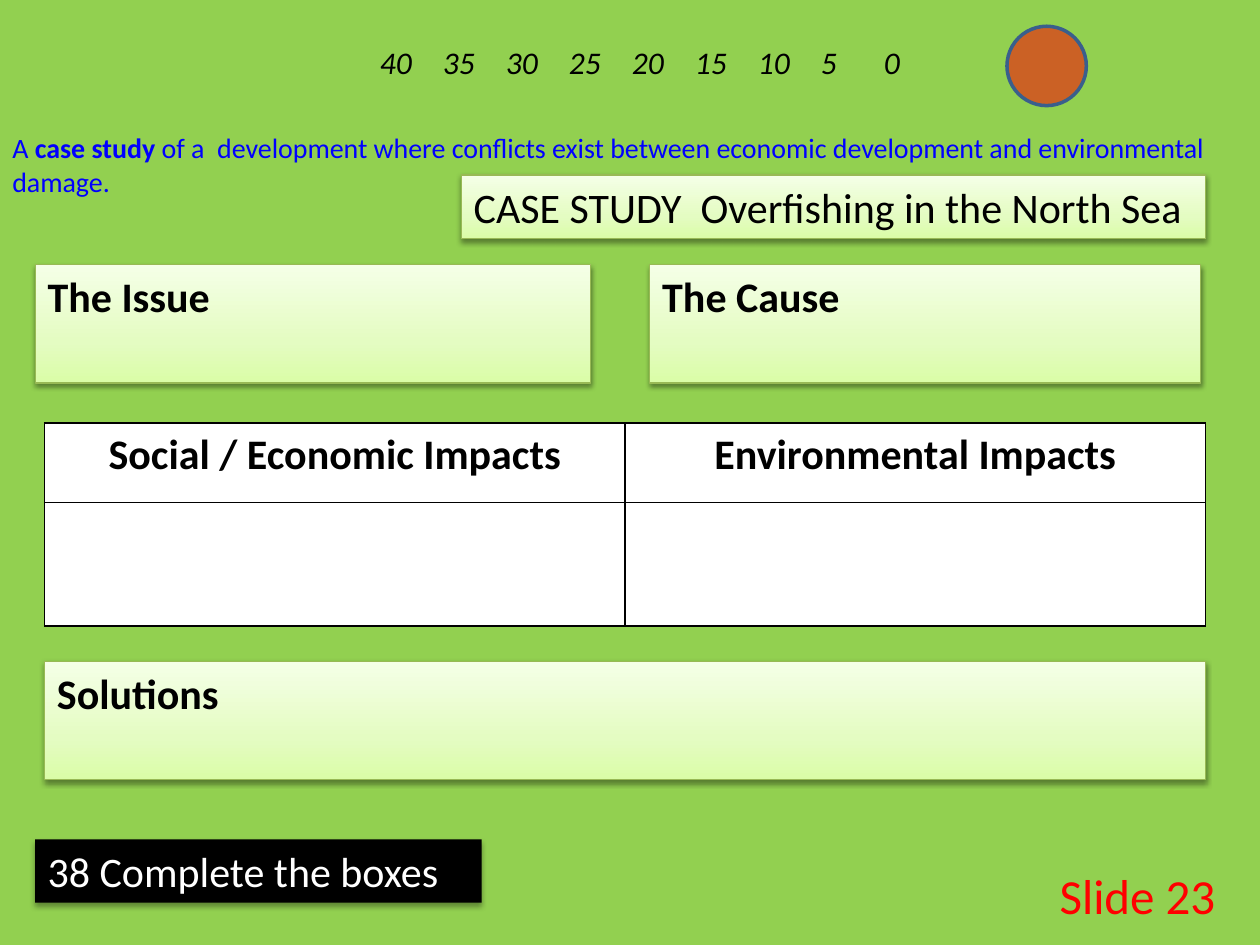
from lxml.etree import SubElement
from pptx import Presentation
from pptx.dml.color import RGBColor
from pptx.enum.shapes import MSO_SHAPE
from pptx.enum.text import MSO_ANCHOR, PP_ALIGN
from pptx.oxml.ns import qn
from pptx.util import Cm, Pt


def rgb(code):
    return RGBColor.from_string(code)


def write(frame, text, size=24, color="000000", bold=False, italic=False, align=PP_ALIGN.LEFT):
    """Append a run to the frame's first paragraph."""
    para = frame.paragraphs[0]
    para.alignment = align
    run = para.add_run()
    run.text = text
    font = run.font
    font.name, font.size = "Calibri", Pt(size)
    font.bold, font.italic = bold, italic
    font.color.rgb = rgb(color)


deck = Presentation()
deck.slide_width, deck.slide_height = Cm(25.4), Cm(19.05)
slide = deck.slides.add_slide(deck.slide_layouts[6])
slide.background.fill.solid()
slide.background.fill.fore_color.rgb = rgb("92D050")
shapes = slide.shapes

# Slide number, countdown scale and introduction
notes = [
    ((21.11, 17.32, 4.04, 1.45), [("Slide 23", dict(size=28, color="FF0000"))]),
    ((1.7, 0.74, 22.4, 1.02), [("\t".join(str(n) for n in range(40, -1, -5)),
                                dict(size=18, italic=True, align=PP_ALIGN.CENTER))]),
    ((0, 2.51, 25.4, 1.63), [
        ("A ", dict(size=16, color="0000FF")),
        ("case study ", dict(size=16, color="0000FF", bold=True)),
        ("of a  development where conflicts exist between economic development "
         "and environmental damage.", dict(size=16, color="0000FF")),
    ]),
]
for place, runs in notes:
    frame = shapes.add_textbox(*map(Cm, place)).text_frame
    frame.word_wrap = True
    for text, style in runs:
        write(frame, text, **style)

# Marker on the scale
mark = shapes.add_shape(MSO_SHAPE.OVAL, Cm(20.3), Cm(0.53), Cm(1.6), Cm(1.6))
mark.shadow.inherit = False
mark.fill.solid()
mark.fill.fore_color.rgb = rgb("FF0000")
tint = mark.fill._xPr.find(qn("a:solidFill"))[0]
SubElement(tint, qn("a:alpha"), val="53000")
mark.line.color.rgb = rgb("3A5F8C")
mark.line.width = Pt(2)

# Boxes with a soft shadow: black for the task, green gradient for the rest
boxes = [
    ("38 Complete the boxes", (0.71, 16.92, 9, 1.28), False, True),
    ("CASE STUDY  Overfishing in the North Sea", (9.3, 3.53, 15.01, 1.28), False, False),
    ("The Issue", (0.71, 5.33, 11.2, 2.39), True, False),
    ("The Cause", (13.1, 5.33, 11.1, 2.39), True, False),
    ("Solutions", (0.9, 13.33, 23.4, 2.39), True, False),
]
for text, place, bold, dark in boxes:
    box = shapes.add_shape(MSO_SHAPE.RECTANGLE, *map(Cm, place))
    props = box._element.spPr
    if dark:
        box.fill.solid()
        box.fill.fore_color.rgb = rgb("000000")
        box.line.fill.background()
    else:
        box.fill.gradient()
        box.fill.gradient_angle = 90
        stops = props.find(qn("a:gradFill")).find(qn("a:gsLst"))
        for stop in list(stops):
            stops.remove(stop)
        for spot, code in ((0, "DAFDA7"), (35, "E4FCC2"), (100, "F5FFE7")):
            stop = SubElement(stops, qn("a:gs"), pos=str(spot * 1000))
            SubElement(stop, qn("a:srgbClr"), val=code)
        box.line.color.rgb = rgb("98B955")
        box.line.width = Pt(0.75)
    box.shadow.inherit = False
    shade = SubElement(props.find(qn("a:effectLst")), qn("a:outerShdw"),
                       blurRad=str(Pt(3.1)), dist=str(Pt(1.8 if dark else 1.6)),
                       dir="5400000", rotWithShape="0")
    tone = SubElement(shade, qn("a:srgbClr"), val="000000")
    SubElement(tone, qn("a:alpha"), val="35000" if dark else "38000")
    frame = box.text_frame
    frame.word_wrap = True
    frame.vertical_anchor = MSO_ANCHOR.TOP
    write(frame, text, bold=bold, color="FFFFFF" if dark else "000000")

# Impacts table
table = shapes.add_table(2, 2, Cm(0.9), Cm(8.53), Cm(23.4), Cm(4.09)).table
table.rows[0].height, table.rows[1].height = Cm(1.6), Cm(2.49)
for cell in table.iter_cells():
    props = cell._tc.get_or_add_tcPr()
    for side in ("a:lnL", "a:lnR", "a:lnT", "a:lnB"):
        edge = SubElement(props, qn(side), w=str(Pt(1)))
        SubElement(SubElement(edge, qn("a:solidFill")), qn("a:srgbClr"), val="000000")
    cell.fill.solid()
    cell.fill.fore_color.rgb = rgb("FFFFFF")
for col, head in enumerate(("Social / Economic Impacts", "Environmental Impacts")):
    write(table.cell(0, col).text_frame, head, bold=True, align=PP_ALIGN.CENTER)

deck.save("out.pptx")
